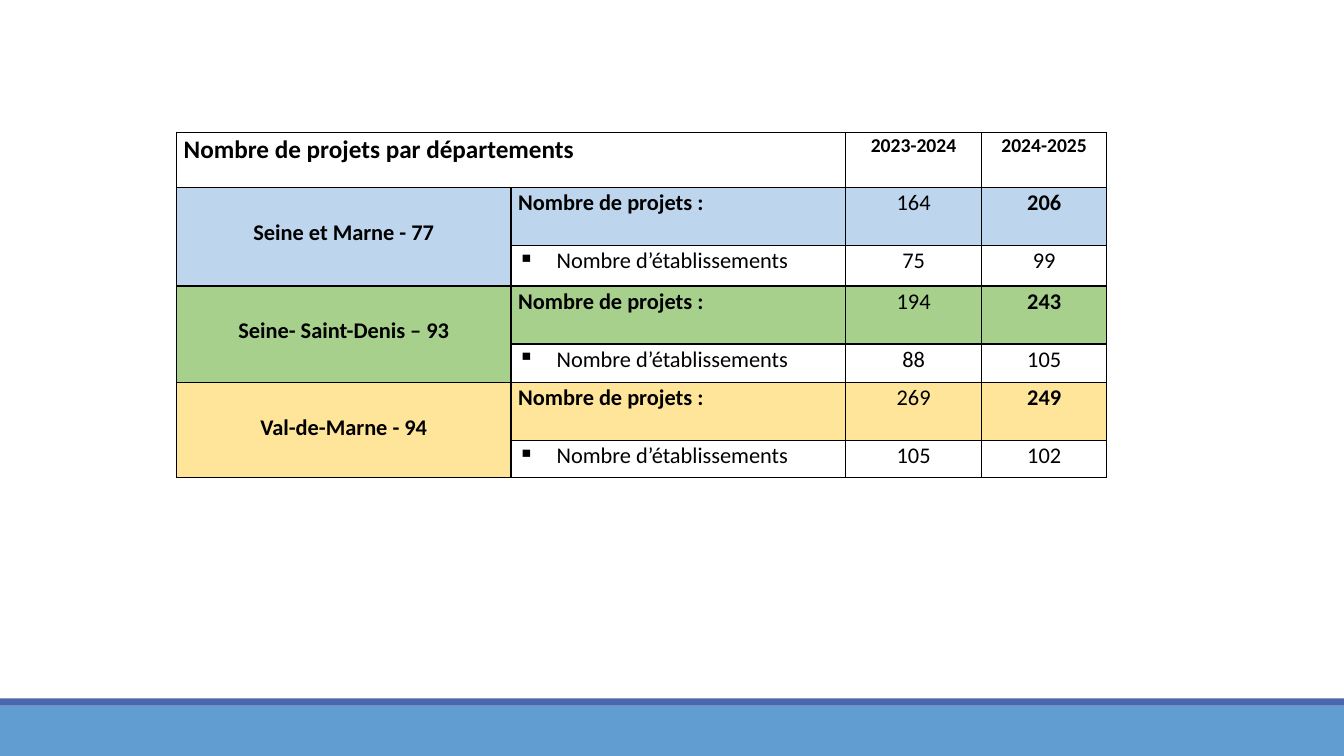
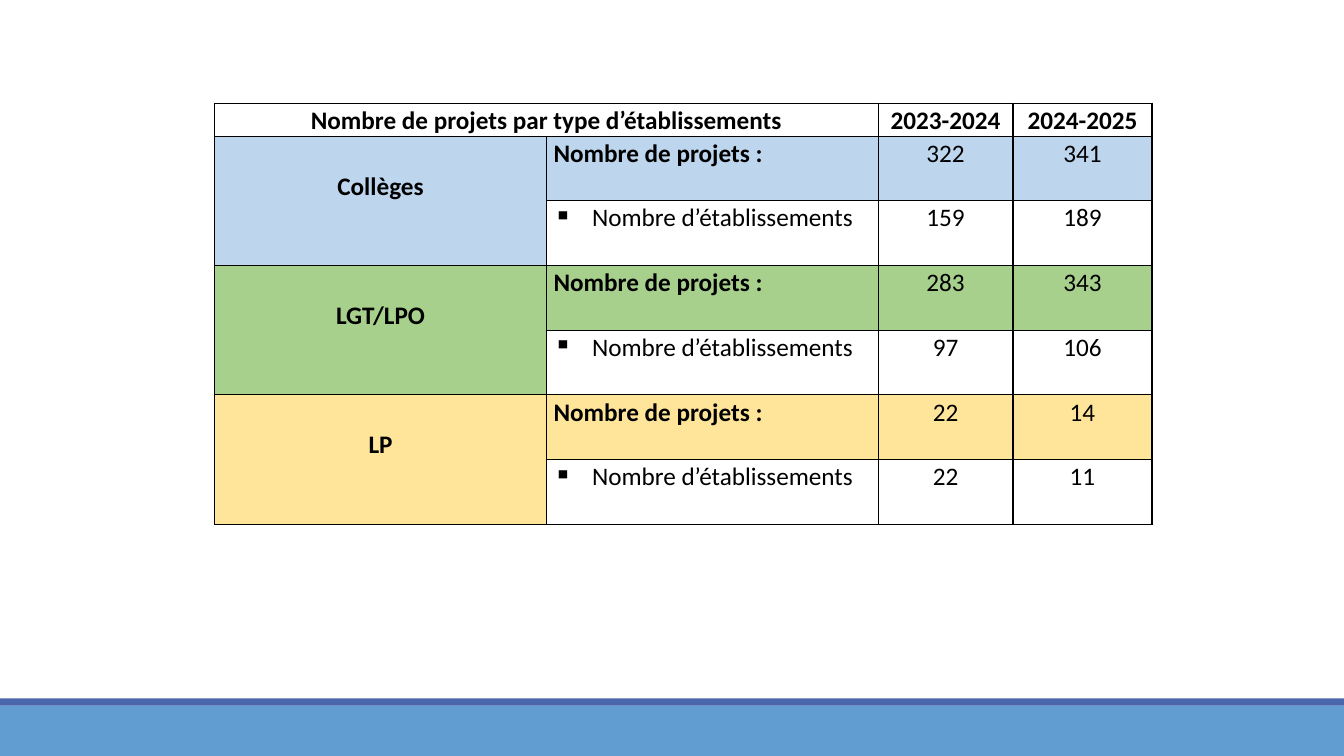
import pptx
import pptx.util
import pptx.dml.color
import pptx.enum.shapes
import pptx.enum.text
import pptx.oxml
import pptx.oxml.ns
from pptx.util import Cm

COLORS = {
    "white": "FFFFFF", "black": "000000",
    "band": "629DD1", "stripe": "4A66AC",
    "blue": "BDD6EE", "green": "A8D08D", "yellow": "FFE599",
}
FONT = "Calibri"
INDENT = Cm(0.97)
NS = pptx.oxml.ns.nsdecls("a")
ALIGN = pptx.enum.text.PP_ALIGN


def rgb(name):
    return pptx.dml.color.RGBColor.from_string(COLORS[name])


def write_cell(cell, text="", size=16, bold=False, fill="white", center=True,
               top=0, bullet=False):
    cell.fill.solid()
    cell.fill.fore_color.rgb = rgb(fill)
    cell.margin_left = cell.margin_right = Cm(0.18)
    cell.margin_top, cell.margin_bottom = Cm(top), 0

    # Borders come before the fill in the cell properties
    tcPr = cell.fill._xPr
    for i, side in enumerate(("lnL", "lnR", "lnT", "lnB")):
        tcPr.insert(i, pptx.oxml.parse_xml(
            f'<a:{side} {NS} w="12700"><a:solidFill><a:srgbClr val="{COLORS["black"]}"/>'
            f'</a:solidFill></a:{side}>'))

    p = cell.text_frame.paragraphs[0]
    p.alignment = ALIGN.CENTER if center else ALIGN.LEFT
    p.line_spacing = 1.07
    p.font.size = pptx.util.Pt(size)
    if text:
        r = p.add_run()
        r.text = text
        r.font.name, r.font.size, r.font.bold = FONT, pptx.util.Pt(size), bold
        r.font.color.rgb = rgb("black")
    if bullet:
        pPr = p._p.get_or_add_pPr()
        pPr.set("marL", str(INDENT))
        pPr.set("indent", str(-INDENT))
        lnSpc = pPr.find(pptx.oxml.ns.qn("a:lnSpc"))
        lnSpc.addnext(pptx.oxml.parse_xml(f'<a:buChar {NS} char="▪"/>'))


prs = pptx.Presentation()
prs.slide_width, prs.slide_height = Cm(33.87), Cm(19.05)
blank = prs.slide_layouts[6]

# Content of the two tables
tables = [
    {
        "title": "Nombre de projets par départements",
        "title_center": False, "year_size": 14, "size": 16, "bold_last": True,
        "left": 4.45, "top": 3.33, "label_top": 0.74,
        "cols": [8.43, 8.43, 3.43, 3.15],
        "rows": [1.4, 1.46, 1.02, 1.46, 0.97, 1.46, 0.94],
        "groups": [
            ("Seine et Marne - 77", (164, 206), (75, 99)),
            ("Seine- Saint-Denis – 93", (194, 243), (88, 105)),
            ("Val-de-Marne - 94", (269, 249), (105, 102)),
        ],
    },
    {
        "title": "Nombre de projets par type d’établissements",
        "title_center": True, "year_size": 18, "size": 18, "bold_last": False,
        "left": 5.41, "top": 2.6, "label_top": 0.83,
        "cols": [8.36, 8.36, 3.4, 3.5],
        "rows": [0.83] + [1.63] * 6,
        "groups": [
            ("Collèges", (322, 341), (159, 189)),
            ("LGT/LPO", (283, 343), (97, 106)),
            ("LP", (22, 14), (22, 11)),
        ],
    },
]

for t in tables:
    s = prs.slides.add_slide(blank)
    frame = s.shapes.add_table(len(t["rows"]), len(t["cols"]), Cm(t["left"]), Cm(t["top"]),
                               Cm(sum(t["cols"])), Cm(sum(t["rows"])))
    table = frame.table
    table.first_row = table.horz_banding = False
    for col, width in zip(table.columns, t["cols"]):
        col.width = Cm(width)
    for row, height in zip(table.rows, t["rows"]):
        row.height = Cm(height)

    # Header row
    write_cell(table.cell(0, 0), t["title"], size=18, bold=True, center=t["title_center"])
    write_cell(table.cell(0, 1))
    table.cell(0, 0).merge(table.cell(0, 1))
    for c, year in enumerate(("2023-2024", "2024-2025"), start=2):
        write_cell(table.cell(0, c), year, size=t["year_size"], bold=True)

    # Two rows per group: projects, then schools
    size = t["size"]
    for g, (label, projects, schools) in enumerate(t["groups"]):
        top = 1 + 2 * g
        fill = ("blue", "green", "yellow")[g]
        write_cell(table.cell(top, 0), label, size=size, bold=True, fill=fill,
                   top=t["label_top"])
        write_cell(table.cell(top + 1, 0), size=size, fill=fill)
        table.cell(top, 0).merge(table.cell(top + 1, 0))
        write_cell(table.cell(top, 1), "Nombre de projets :", size=size, bold=True,
                   fill=fill, center=False)
        write_cell(table.cell(top + 1, 1), "Nombre d’établissements", size=size,
                   center=False, bullet=True)
        for i in range(2):
            write_cell(table.cell(top, 2 + i), str(projects[i]), size=size, fill=fill,
                       bold=t["bold_last"] and i == 1)
            write_cell(table.cell(top + 1, 2 + i), str(schools[i]), size=size)

# Footer bands, drawn once and moved to the slide master
master_tree = prs.slide_master.shapes.element
for i, (color, y, height) in enumerate((("band", 17.78, 1.27), ("stripe", 17.6, 0.18))):
    sp = prs.slides[0].shapes.add_shape(pptx.enum.shapes.MSO_SHAPE.RECTANGLE,
                                        0, Cm(y), prs.slide_width, Cm(height))
    sp.shadow.inherit = False
    sp.fill.solid()
    sp.fill.fore_color.rgb = rgb(color)
    sp.line.fill.background()
    sp.element.nvSpPr.cNvPr.set("id", str(20 + i))
    master_tree.insert(2 + i, sp.element)

prs.save("out.pptx")
